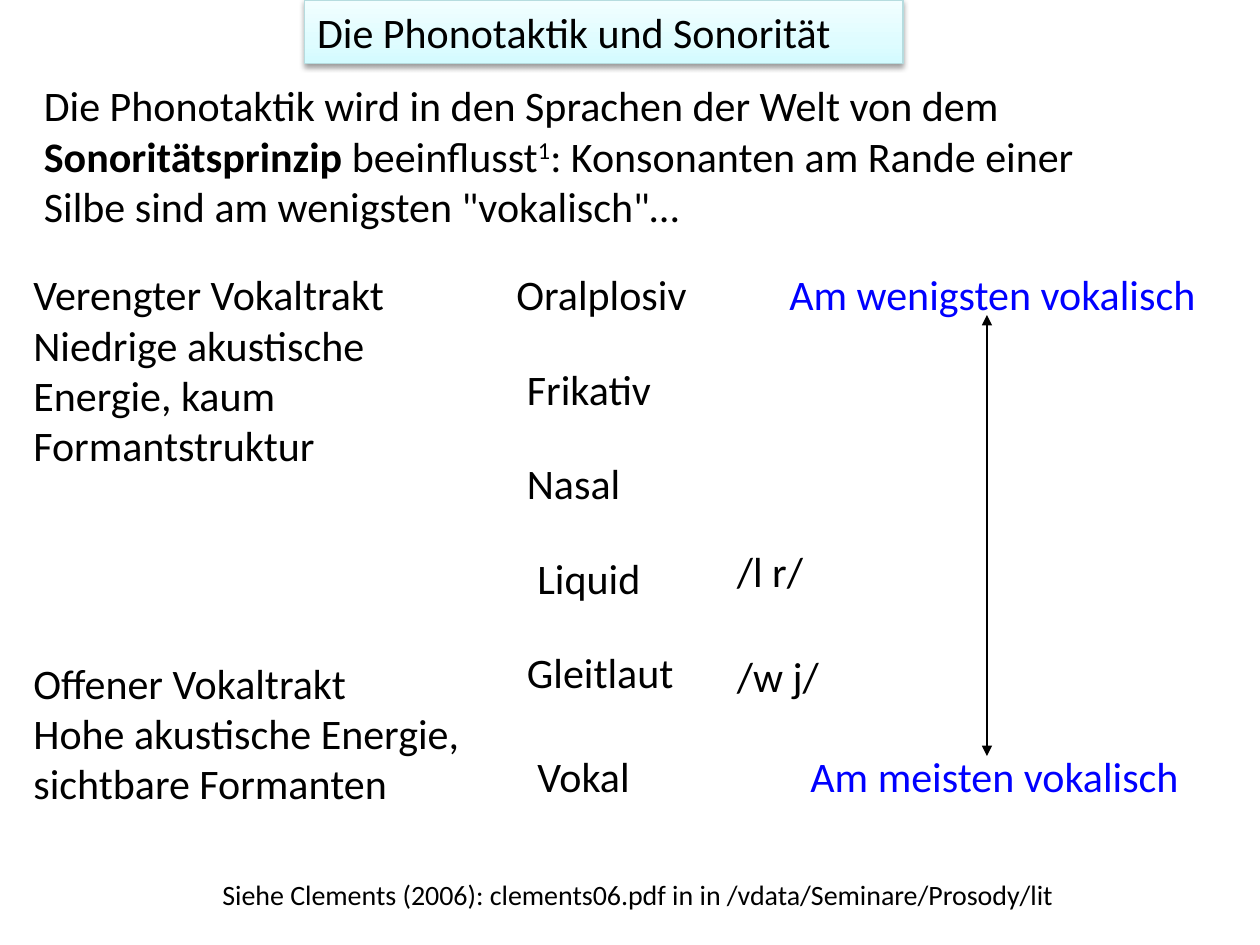
from copy import deepcopy
from dataclasses import dataclass

from lxml.etree import SubElement
from pptx import Presentation
from pptx.dml.color import RGBColor as Color
from pptx.enum.shapes import MSO_CONNECTOR as Connector
from pptx.enum.text import MSO_ANCHOR as Anchor, MSO_AUTO_SIZE as AutoSize, PP_ALIGN as Align
from pptx.oxml import parse_xml
from pptx.oxml.ns import nsdecls, qn
from pptx.util import Pt


@dataclass(frozen=True)
class Theme:
    font: str = "Calibri"
    body: int = 24
    note: int = 16
    line: float = 0.75
    ink: Color = Color(0, 0, 0)
    accent: Color = Color(0, 0, 255)
    title_border: Color = Color(0xB6, 0xDC, 0xDF)
    title_gradient: tuple = ((0, "D3FBFF"), (0.35, "DFFCFF"), (1, "F2FEFF"))


THEME = Theme()
LABEL_HEIGHT = 36.5

# Text, left, top, width
SONORITY_SCALE = [
    ("Oralplosiv", 288, 150, 115),
    ("Frikativ", 294, 204, 88),
    ("Nasal", 294, 258, 69),
    ("Liquid", 300, 312, 75),
    ("Gleitlaut", 294, 366, 104),
    ("Vokal", 300, 425.5, 70),
]
EXAMPLES = [("/l r/", 414, 308, 55), ("/w j/", 414, 368, 64)]
EXTREMES = [
    ("Am wenigsten vokalisch", 444, 150, 252),
    ("Am meisten vokalisch", 456, 425.5, 229),
]


def style_paragraph(paragraph, size=THEME.body, color=THEME.ink):
    paragraph.alignment = Align.LEFT
    paragraph.font.name = THEME.font
    paragraph.font.size = Pt(size)
    paragraph.font.color.rgb = color


def add_text(slide, text, left, top, width, height, wrap=True, **style):
    """Add a text box; each line of text becomes a paragraph."""
    box = slide.shapes.add_textbox(Pt(left), Pt(top), Pt(width), Pt(height))
    frame = box.text_frame
    frame.word_wrap = wrap
    frame.auto_size = AutoSize.SHAPE_TO_FIT_TEXT
    frame.text = text
    for paragraph in frame.paragraphs:
        style_paragraph(paragraph, **style)
    return frame


def add_labels(slide, labels, color=THEME.ink):
    for text, left, top, width in labels:
        add_text(slide, text, left, top, width, LABEL_HEIGHT, wrap=False, color=color)


def fill_gradient(shape, stops):
    """Fill a shape with a gradient rising from its bottom edge."""
    shape.fill.gradient()
    shape.fill.gradient_angle = 90
    stop_list = shape.fill.gradient_stops[0]._gs.getparent()
    stop_list.append(deepcopy(stop_list[-1]))
    for stop, (position, color) in zip(shape.fill.gradient_stops, stops):
        stop.position = position
        stop.color.rgb = Color.from_string(color)


def add_title(slide, text):
    title = slide.shapes.title
    title.left, title.top, title.width, title.height = Pt(174), Pt(0), Pt(342), Pt(LABEL_HEIGHT)
    fill_gradient(title, THEME.title_gradient)
    title.line.color.rgb = THEME.title_border
    title.line.width = Pt(THEME.line)
    title._element.spPr.append(parse_xml(
        f'<a:effectLst {nsdecls("a")}>'
        '<a:outerShdw blurRad="39370" dist="20320" dir="5400000" rotWithShape="0">'
        '<a:srgbClr val="000000"><a:alpha val="38000"/></a:srgbClr>'
        '</a:outerShdw></a:effectLst>'))
    frame = title.text_frame
    frame.text = text
    frame.word_wrap = True
    frame.auto_size = AutoSize.NONE
    frame.vertical_anchor = Anchor.TOP
    style_paragraph(frame.paragraphs[0])


def add_principle(slide):
    frame = add_text(slide, "Die Phonotaktik wird in den Sprachen der Welt von dem ",
                     18, 42, 636, 94.5)
    term, verb, mark, rest = (frame.paragraphs[0].add_run() for _ in range(4))
    term.text = "Sonoritätsprinzip"
    term.font.bold = True
    verb.text = " beeinflusst"
    mark.text = "1"
    mark._r.get_or_add_rPr().set("baseline", "30000")
    rest.text = ": Konsonanten am Rande einer Silbe sind am wenigsten \"vokalisch\"…"


def add_double_arrow(slide, x, top, bottom):
    arrow = slide.shapes.add_connector(Connector.STRAIGHT, Pt(x), Pt(top), Pt(x), Pt(bottom))
    arrow.line.color.rgb = THEME.ink
    arrow.line.width = Pt(THEME.line)
    for end in ("a:headEnd", "a:tailEnd"):
        SubElement(arrow.line._get_or_add_ln(), qn(end), type="triangle")
    SubElement(arrow._element.spPr, qn("a:effectLst"))


def main():
    presentation = Presentation()
    presentation.slide_width, presentation.slide_height = Pt(720), Pt(540)
    slide = presentation.slides.add_slide(presentation.slide_layouts[5])

    # Title and principle
    add_title(slide, "Die Phonotaktik und Sonorität")
    add_principle(slide)

    # Vocal tract descriptions
    add_text(slide, "Verengter Vokaltrakt\nNiedrige akustische Energie, kaum Formantstruktur",
             12, 150, 252, 124)
    add_text(slide, "Offener Vokaltrakt\nHohe akustische Energie, sichtbare Formanten",
             12, 372, 270, 94.5)

    # Sonority scale with examples and extremes
    add_labels(slide, SONORITY_SCALE)
    add_labels(slide, EXAMPLES)
    add_labels(slide, EXTREMES, THEME.accent)
    add_double_arrow(slide, 564, 180, 432)

    # Reference
    add_text(slide, "Siehe Clements (2006): clements06.pdf in in /vdata/Seminare/Prosody/lit",
             120, 498, 498, 26.5, size=THEME.note)

    presentation.save("out.pptx")


if __name__ == "__main__":
    main()
